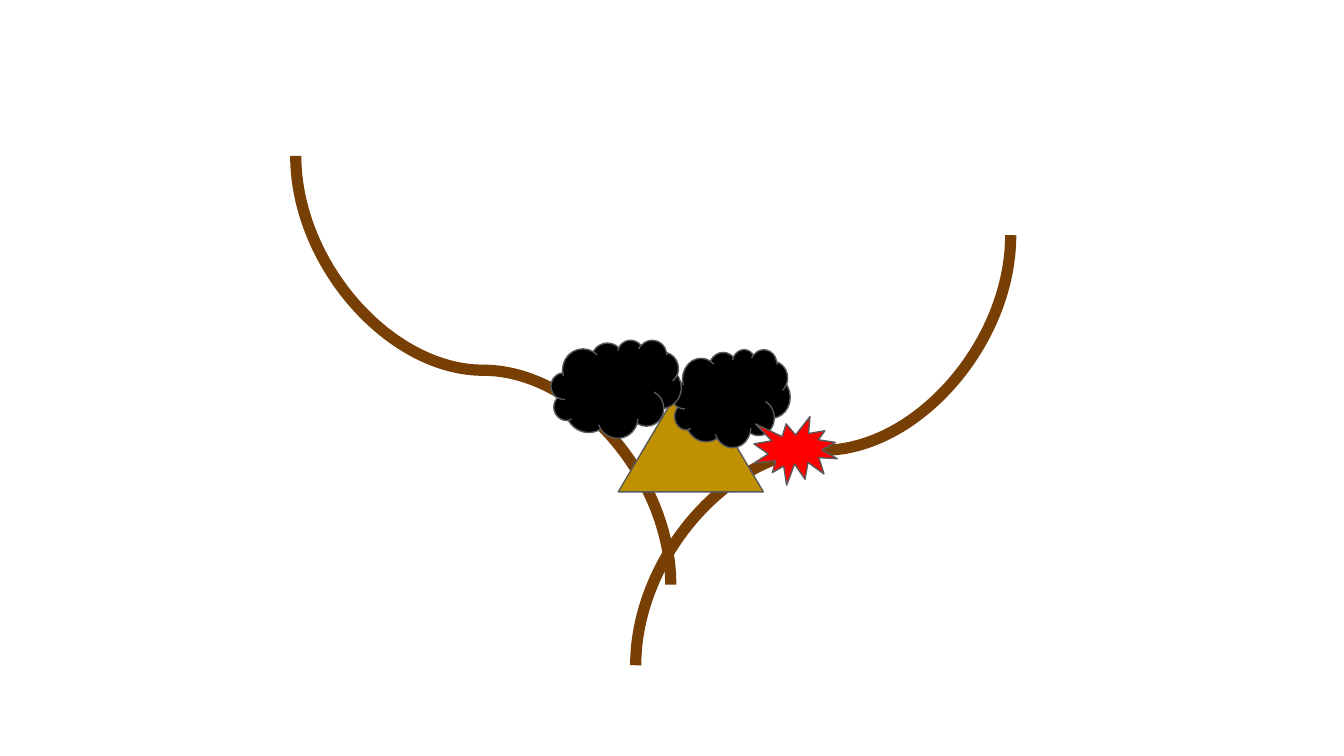
"""Build a slide with two crossing curves, a triangle, two clouds and a burst."""
from lxml import etree
from pptx import Presentation
from pptx import util as u
from pptx.dml.color import RGBColor
from pptx.enum import shapes
from pptx.oxml.ns import qn

THEME = {
    "branch": "783F04", "hill": "BF9000", "cloud": "000000", "burst": "FF0000",
    "outline": "595959", "branch_width": 6, "outline_width": 0.75,
}
WIDTH = 10
SIZE = (WIDTH, WIDTH * 9 / 16)
BRANCHES = [((2.2, 1.16), (4.99, 4.35)), ((4.73, 4.95), (7.52, 1.75))]
FIGURES = [
    ("ISOSCELES_TRIANGLE", "hill", (4.6, 2.75, 1.08, 0.91)),
    ("CLOUD", "cloud", (5, 2.6, 0.88, 0.73)),
    ("CLOUD", "cloud", (4.1, 2.53, 0.97, 0.73)),
    ("EXPLOSION1", "burst", (5.61, 3.1, 0.62, 0.51)),
]


def set_line(line, color, width):
    line.color.rgb = RGBColor.from_string(THEME[color])
    line.width = u.Pt(THEME[width])


def add_branch(slide, begin, end):
    (x1, y1), (x2, y2) = begin, end
    cx, cy = (x1 + x2) / 2, (y1 + y2) / 2
    dx, dy = (y2 - y1) / 2, (x1 - x2) / 2
    turned_ends = (cx + dx, cy + dy, cx - dx, cy - dy)
    c = slide.shapes.add_connector(
        shapes.MSO_CONNECTOR.CURVE, *map(u.Inches, turned_ends))
    set_line(c.line, "branch", "branch_width")
    sp_pr = c._element.spPr
    sp_pr.find(qn("a:xfrm")).set("rot", str(270 * 60000))
    etree.SubElement(sp_pr, qn("a:effectLst"))


def add_figure(slide, kind, color, box):
    preset = getattr(shapes.MSO_SHAPE, kind)
    sp = slide.shapes.add_shape(preset, *map(u.Inches, box))
    sp.shadow.inherit = False
    sp.fill.solid()
    sp.fill.fore_color.rgb = RGBColor.from_string(THEME[color])
    set_line(sp.line, "outline", "outline_width")


def main():
    prs = Presentation()
    prs.slide_width, prs.slide_height = map(u.Inches, SIZE)
    slide = prs.slides.add_slide(prs.slide_layouts[6])
    for begin, end in BRANCHES:
        add_branch(slide, begin, end)
    for kind, color, box in FIGURES:
        add_figure(slide, kind, color, box)
    prs.save("out.pptx")


if __name__ == "__main__":
    main()
